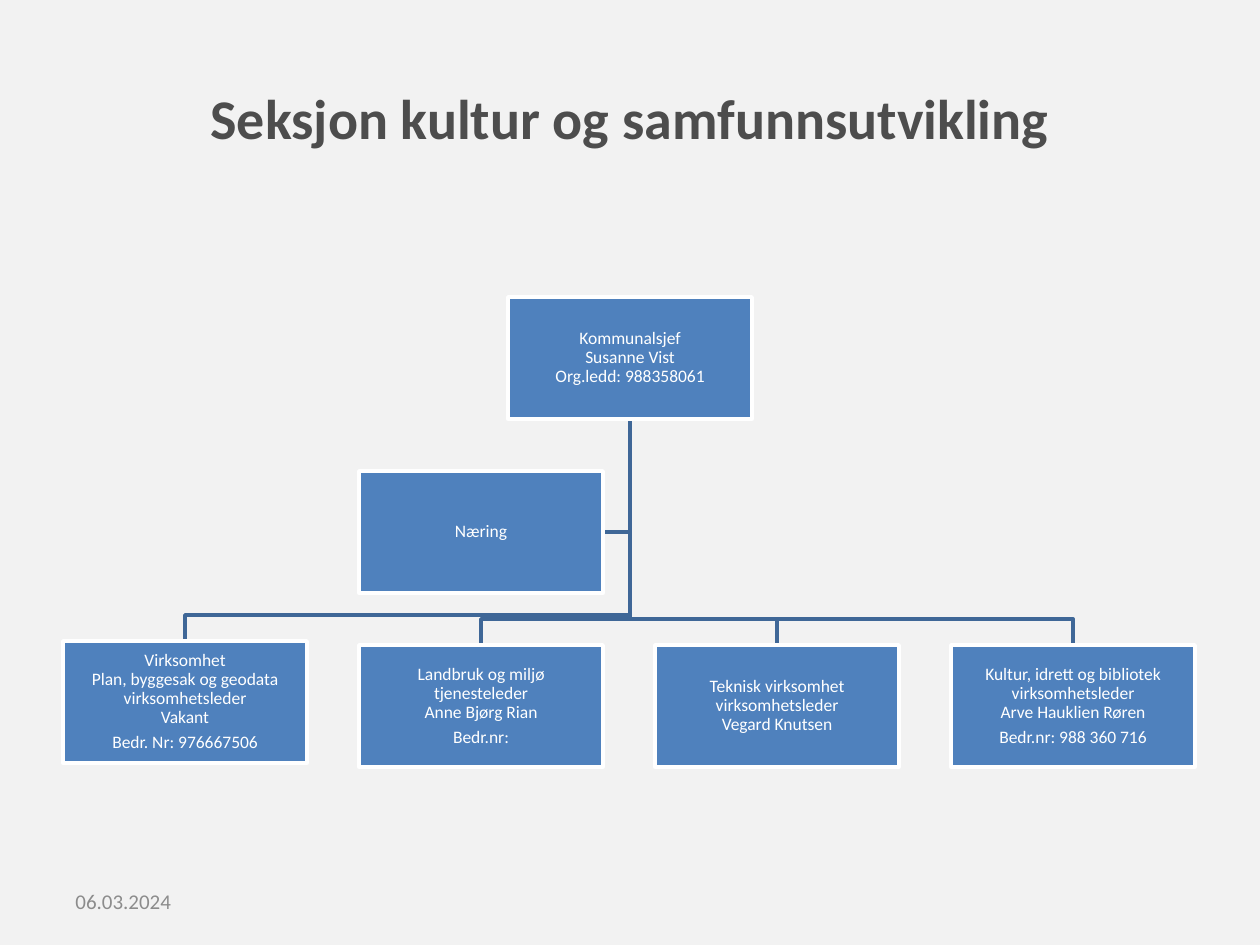
import pptx
import pptx.dml.color
import pptx.enum.shapes
import pptx.enum.text
import pptx.util

PX = 914400 / 126
FONT = "Calibri"
BOX_WIDTH, BOX_HEIGHT = 244, 122
COLUMN_STEP = 296
BUS_GAP = 26
STAFF = [
    (0, "Virksomhet\vPlan, byggesak og geodata\vvirksomhetsleder\vVakant\nBedr. Nr: 976667506"),
    (4, "Landbruk og miljø\vtjenesteleder\vAnne Bjørg Rian\nBedr.nr:"),
    (4, "Teknisk virksomhet\vvirksomhetsleder\vVegard Knutsen"),
    (4, "Kultur, idrett og bibliotek\vvirksomhetsleder\vArve Hauklien Røren\nBedr.nr: 988 360 716"),
]


def px(length):
    return pptx.util.Emu(round(length * PX))


def color(value):
    return pptx.dml.color.RGBColor.from_string(value)


def write(frame, text, size, shade, align, bold=False):
    frame.word_wrap = True
    frame.vertical_anchor = pptx.enum.text.MSO_ANCHOR.MIDDLE
    frame.text = text
    for para in frame.paragraphs:
        para.alignment = align
        para.font.name = FONT
        para.font.size = pptx.util.Pt(size)
        para.font.bold = bold
        para.font.color.rgb = color(shade)


def add_label(page, left, top, width, height, *style):
    box = page.shapes.add_textbox(px(left), px(top), px(width), px(height))
    write(box.text_frame, *style)


def add_unit(page, left, top, text):
    box = page.shapes.add_shape(
        pptx.enum.shapes.MSO_SHAPE.RECTANGLE,
        px(left), px(top), px(BOX_WIDTH), px(BOX_HEIGHT))
    box.shadow.inherit = False
    box.fill.solid()
    box.fill.fore_color.rgb = color("4F81BD")
    box.line.color.rgb = color("FFFFFF")
    box.line.width = pptx.util.Pt(2)
    frame = box.text_frame
    frame.margin_left = frame.margin_right = px(1)
    frame.margin_top = frame.margin_bottom = px(1)
    write(frame, text, 10, "FFFFFF", pptx.enum.text.PP_ALIGN.CENTER)
    for para in frame.paragraphs:
        para.line_spacing = 0.9
        para.space_after = pptx.util.Pt(3.5)


def add_branch(page, start, *corners):
    builder = page.shapes.build_freeform(*start, scale=PX)
    builder.add_line_segments(corners, close=False)
    branch = builder.convert_to_shape()
    branch.shadow.inherit = False
    branch.fill.background()
    branch.line.color.rgb = color("3F6797")
    branch.line.width = pptx.util.Pt(2)


def add_chart_tree(page, left, top, width):
    middle = left + width // 2
    root = (middle, top + BOX_HEIGHT)
    assistant_left, assistant_top = left + COLUMN_STEP, top + 174
    assistant_middle = assistant_top + BOX_HEIGHT // 2
    units = [(left + column * COLUMN_STEP, top + 344 + drop, text)
             for column, (drop, text) in enumerate(STAFF)]

    add_branch(page, root, (middle, assistant_middle),
               (assistant_left + BOX_WIDTH, assistant_middle))
    for unit_left, unit_top, _ in reversed(units):
        center, bus = unit_left + BOX_WIDTH // 2, unit_top - BUS_GAP
        add_branch(page, root, (middle, bus), (center, bus), (center, unit_top))

    add_unit(page, middle - BOX_WIDTH // 2, top,
             "Kommunalsjef\vSusanne Vist\vOrg.ledd: 988358061")
    for unit in units:
        add_unit(page, *unit)
    add_unit(page, assistant_left, assistant_top, "Næring")


def main():
    deck = pptx.Presentation()
    deck.slide_width, deck.slide_height = px(1260), px(945)
    page = deck.slides.add_slide(deck.slide_layouts[6])
    page.background.fill.solid()
    page.background.fill.fore_color.rgb = color("F2F2F2")
    align = pptx.enum.text.PP_ALIGN
    add_label(page, 64, 38, 1132, 158, "Seksjon kultur og samfunnsutvikling",
              32, "4D4D4D", align.CENTER, True)
    add_chart_tree(page, 63, 297, 1134)
    add_label(page, 63, 876, 294, 50, "06.03.2024", 12, "8C8C8C", align.LEFT)
    deck.save("out.pptx")


if __name__ == "__main__":
    main()
